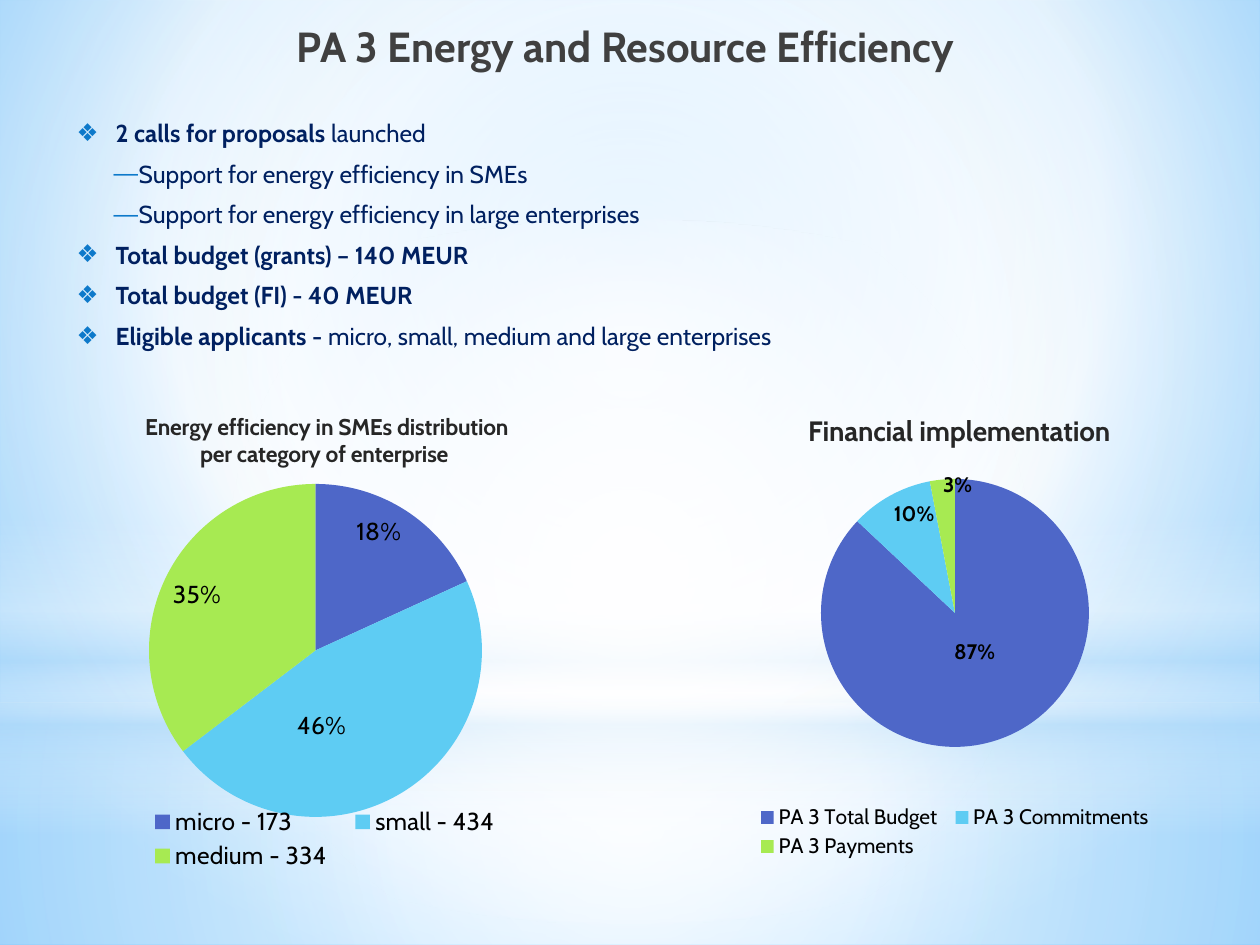
from lxml.etree import SubElement
from pptx import Presentation
from pptx.chart.data import CategoryChartData
from pptx.dml.color import RGBColor
from pptx.enum.chart import XL_CHART_TYPE as ChartType
from pptx.enum.chart import XL_LABEL_POSITION as LabelPosition
from pptx.enum.chart import XL_LEGEND_POSITION as LegendPosition
from pptx.enum.shapes import MSO_SHAPE as Shape
from pptx.enum.text import MSO_ANCHOR as Anchor
from pptx.enum.text import MSO_AUTO_SIZE as AutoSize
from pptx.enum.text import PP_ALIGN as Align
from pptx.oxml import parse_xml
from pptx.oxml.ns import nsdecls, qn
from pptx.util import Emu, Pt

FONT = "Cabin"
BLACK = RGBColor(0x00, 0x00, 0x00)
HEADING = RGBColor(0x40, 0x40, 0x40)
CHART_HEADING = RGBColor(0x26, 0x26, 0x26)
NAVY = RGBColor(0x00, 0x20, 0x60)
BULLET_BLUE = RGBColor(0x0D, 0x79, 0xCA)
WHITE = RGBColor(0xFF, 0xFF, 0xFF)
PALE_BLUE = RGBColor(0xB4, 0xDC, 0xFA)
SKY = RGBColor(0x9E, 0xD5, 0xFF)
DEEP_SKY = RGBColor(0x5B, 0xB9, 0xFF)
SLICES = (
    RGBColor(0x4E, 0x67, 0xC8),
    RGBColor(0x5E, 0xCC, 0xF3),
    RGBColor(0xA7, 0xEA, 0x52),
)
CENTRE = (50, 50, 50, 50)
BULLETS = {0: ("❖", 39, -39), 1: ("―", 62, -25)}


def px(length):
    return Emu(round(length * 914400 / 126))


def place(shape, box):
    shape.left, shape.top, shape.width, shape.height = map(px, box)


def style(font, size, color, bold=False):
    font.name, font.size, font.bold = FONT, Pt(size), bold
    font.color.rgb = color


def write(paragraph, text, size=14, color=NAVY, bold=False):
    run = paragraph.add_run()
    run.text = text
    style(run.font, size, color, bold)


def gradient(stops, focus=None):
    marks = "".join(
        f'<a:gs pos="{pos * 1000}"><a:srgbClr val="{color}">'
        f'<a:alpha val="{alpha * 1000}"/></a:srgbClr></a:gs>'
        for pos, color, alpha in stops
    )
    if focus:
        sides = " ".join(f'{side}="{value * 1000}"' for side, value in zip("ltrb", focus))
        shade = f'<a:path path="circle"><a:fillToRect {sides}/></a:path>'
    else:
        shade = '<a:lin ang="5400000" scaled="0"/>'
    return parse_xml(
        f'<a:gradFill {nsdecls("a")} rotWithShape="1"><a:gsLst>{marks}</a:gsLst>{shade}</a:gradFill>'
    )


def paint(fill, holder, stops, focus=None):
    fill.gradient()
    holder.replace(holder.find(qn("a:gradFill")), gradient(stops, focus))


def add_glow(slide, kind, box, stops, focus=None):
    glow = slide.shapes.add_shape(kind, *map(px, box))
    glow.shadow.inherit = False
    glow.line.fill.background()
    paint(glow.fill, glow._element.spPr, stops, focus)


def add_backdrop(slide):
    fill = slide.background.fill
    fill.gradient()
    holder = slide._element.cSld.find(qn("p:bg")).find(qn("p:bgPr"))
    paint(fill, holder, [(0, SKY, 100), (60, WHITE, 100), (100, DEEP_SKY, 100)], (20, 10, 20, 60))
    add_glow(slide, Shape.RECTANGLE, (0, 703, 1260, 242),
             [(0, WHITE, 91), (37, WHITE, 76), (100, PALE_BLUE, 79)], CENTRE)
    add_glow(slide, Shape.RECTANGLE, (0, 0, 1260, 703),
             [(0, WHITE, 89), (48, WHITE, 62), (100, PALE_BLUE, 79)], CENTRE)
    add_glow(slide, Shape.RECTANGLE, (0, 519, 1260, 315),
             [(0, WHITE, 0), (29, WHITE, 30), (45, PALE_BLUE, 40),
              (55, WHITE, 26), (65, PALE_BLUE, 60), (100, WHITE, 0)])
    add_glow(slide, Shape.OVAL, (0, 220, 1260, 703),
             [(0, WHITE, 100), (56, WHITE, 0)], CENTRE)


def fill_title(title, text):
    place(title, (0, 6, 1260, 79))
    frame = title.text_frame
    frame.auto_size, frame.vertical_anchor = AutoSize.NONE, Anchor.MIDDLE
    heading = frame.paragraphs[0]
    heading.alignment, heading.space_after = Align.CENTER, Pt(12)
    write(heading, text, size=24, color=HEADING, bold=True)


def fill_list(body, items):
    place(body, (64, 106, 1160, 258))
    frame = body.text_frame
    frame.auto_size, frame.vertical_anchor = AutoSize.NONE, Anchor.TOP
    frame.margin_right = 0
    for number, (level, strong, plain) in enumerate(items):
        item = frame.add_paragraph() if number else frame.paragraphs[0]
        item.level, item.alignment, item.line_spacing = level, Align.JUSTIFY, 1.2
        item.space_before, item.space_after = Pt(0), Pt(3)
        mark, margin, indent = BULLETS[level]
        props = item._p.get_or_add_pPr()
        props.set("marL", str(px(margin)))
        props.set("indent", str(px(indent)))
        SubElement(SubElement(props, qn("a:buClr")), qn("a:srgbClr")).set("val", str(BULLET_BLUE))
        SubElement(props, qn("a:buChar")).set("char", mark)
        for text, bold in ((strong, True), (plain, False)):
            if text:
                write(item, text, bold=bold)


def set_layout(part, index, **values):
    old = part.find(qn("c:layout"))
    if old is not None:
        part.remove(old)
    layout = parse_xml(f'<c:layout {nsdecls("c")}><c:manualLayout/></c:layout>')
    for tag, value in values.items():
        SubElement(layout[0], qn(f"c:{tag}")).set("val", str(value))
    part.insert(index, layout)


def edges(frame, box):
    left, top, width, height = frame
    x, y, w, h = box
    return dict(xMode="edge", yMode="edge", x=round((x - left) / width, 4),
                y=round((y - top) / height, 4), w=round(w / width, 4), h=round(h / height, 4))


def add_pie(slide, frame, title, categories, values, pie, legend, title_at,
            title_size, legend_size, label_size, bold_labels, nudges):
    table = CategoryChartData()
    table.categories = categories
    table.add_series(title, values)
    chart = slide.shapes.add_chart(ChartType.PIE, *map(px, frame), table).chart
    style(chart.font, 18, BLACK)

    chart.has_title = True
    write(chart.chart_title.text_frame.paragraphs[0], title,
          size=title_size, color=CHART_HEADING, bold=True)
    corner = edges(frame, (*title_at, 0, 0))
    set_layout(chart.chart_title._element, 1,
               **{tag: corner[tag] for tag in ("xMode", "yMode", "x", "y")})

    chart.has_legend = True
    chart.legend.position, chart.legend.include_in_layout = LegendPosition.BOTTOM, False
    style(chart.legend.font, legend_size, BLACK)
    set_layout(chart.legend._element, 1, **edges(frame, legend))

    plot = chart.plots[0]
    plot.vary_by_categories = True
    set_layout(plot._element.getparent(), 0, layoutTarget="inner", **edges(frame, pie))
    series = plot.series[0]
    for index, color in enumerate(SLICES):
        wedge = series.points[index].format
        wedge.fill.solid()
        wedge.fill.fore_color.rgb = color
        wedge.line.fill.background()

    labels = series.data_labels
    labels.show_percentage, labels.show_value = True, False
    labels.number_format, labels.number_format_is_linked = "0%", False
    labels.position = LabelPosition.INSIDE_END
    style(labels.font, label_size, BLACK, bold_labels)
    for index, (dx, dy) in nudges.items():
        label = series.points[index].data_label
        style(label.font, label_size, BLACK, bold_labels)
        label.position = LabelPosition.INSIDE_END
        entry = labels._element.findall(qn("c:dLbl"))[-1]
        entry.find(qn("c:showVal")).set("val", "0")
        entry.find(qn("c:showPercent")).set("val", "1")
        set_layout(entry, 1, x=round(dx / frame[2], 4), y=round(dy / frame[3], 4))


def main():
    deck = Presentation()
    deck.slide_width, deck.slide_height = px(1260), px(945)
    slide = deck.slides.add_slide(deck.slide_layouts[1])
    title, body = slide.placeholders
    add_backdrop(slide)
    for placeholder in (title, body):
        slide.shapes._spTree.append(placeholder._element)
    fill_title(title, "PA 3 Energy and Resource Efficiency ")
    fill_list(body, [
        (0, "2 calls for proposals ", "launched"),
        (1, "", "Support for energy efficiency in SMEs"),
        (1, "", "Support for energy efficiency in large enterprises"),
        (0, "Total budget (grants) – 140 MEUR", ""),
        (0, "Total budget (FI) - 40 MEUR", ""),
        (0, "Eligible applicants - ", "micro, small, medium and large enterprises"),
    ])
    add_pie(slide, (84, 383, 476, 525),
            "Energy efficiency in SMEs distribution per category of enterprise ",
            ["micro - 173", "small - 434", "medium - 334"], [18, 46, 35],
            pie=(149, 484, 333, 333), legend=(135, 803, 380, 72), title_at=(141, 408),
            title_size=13, legend_size=14, label_size=14, bold_labels=False,
            nudges={1: (-51, -46)})
    add_pie(slide, (719, 363, 466, 501), "Financial implementation",
            ["PA 3 Total Budget", "PA 3 Commitments", "PA 3 Payments"], [87, 10, 3],
            pie=(821, 479, 268, 268), legend=(750, 801, 410, 62), title_at=(803, 407),
            title_size=16, legend_size=12, label_size=12, bold_labels=True,
            nudges={0: (-10, -64), 2: (0, -14)})
    deck.save("out.pptx")


if __name__ == "__main__":
    main()
